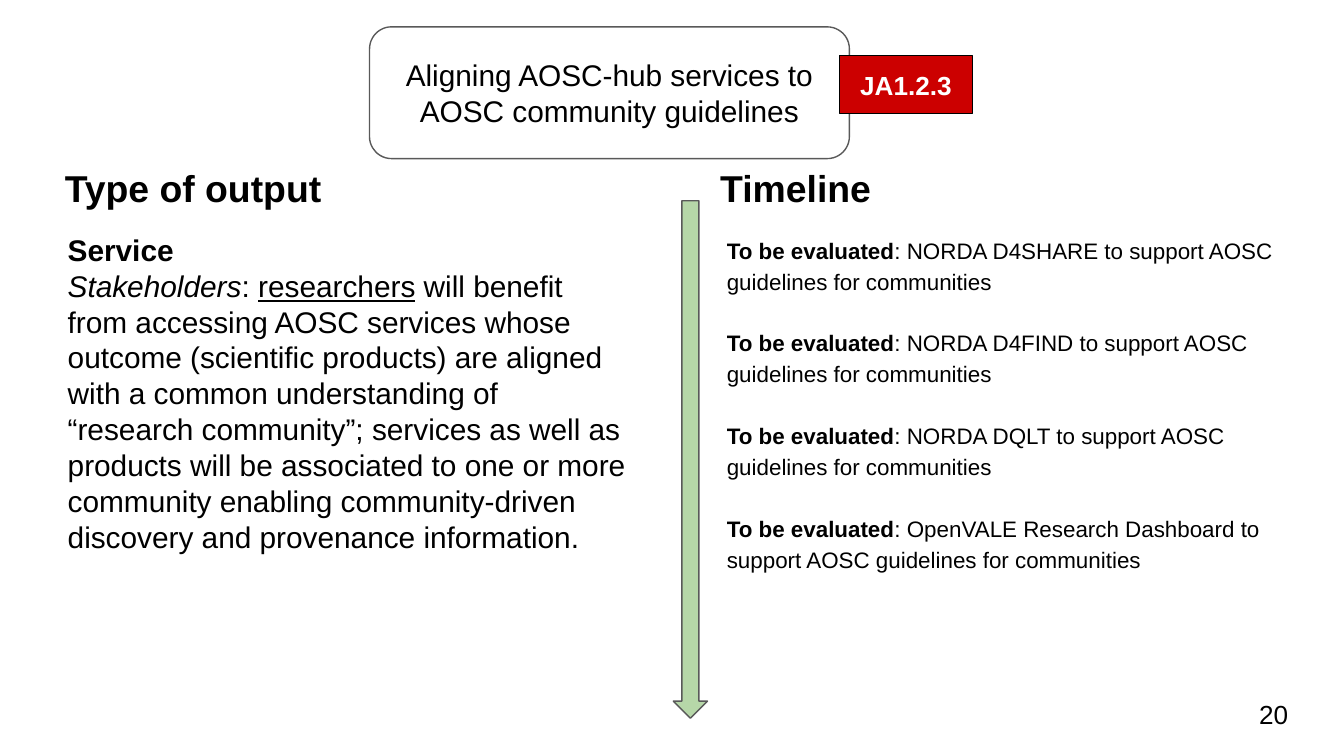
from pptx import Presentation
from pptx.dml.color import RGBColor
from pptx.enum.shapes import MSO_SHAPE
from pptx.enum.text import MSO_ANCHOR, PP_ALIGN
from pptx.util import Inches, Pt

ROUNDED, RECTANGLE, DOWN_ARROW = (
    MSO_SHAPE.ROUNDED_RECTANGLE, MSO_SHAPE.RECTANGLE, MSO_SHAPE.DOWN_ARROW)
TOP, MIDDLE = MSO_ANCHOR.TOP, MSO_ANCHOR.MIDDLE
LEFT, CENTER = PP_ALIGN.LEFT, PP_ALIGN.CENTER

COLORS = {"black": "000000", "white": "FFFFFF", "gray": "595959",
          "red": "CC0000", "green": "B6D7A8"}
FONT = "Arial"
COLUMNS, ROWS = 100, 56.25
CELL = Inches(0.1)

TITLE = "Aligning AOSC-hub services to AOSC community guidelines"
TAG = "JA1.2.3"
PAGE_NUMBER = "20"
OUTPUT_HEADING, TIMELINE_HEADING = "Type of output", "Timeline"
OUTPUT = [
    [("Service", "bold")],
    [("Stakeholders", "italic"), (": ", ""), ("researchers", "underline"),
     (" will benefit from accessing AOSC services whose outcome (scientific "
      "products) are aligned with a common understanding of “research "
      "community”; services as well as products will be associated to one or "
      "more community enabling community-driven discovery and provenance "
      "information.", "")],
]
SERVICES = ["NORDA D4SHARE", "NORDA D4FIND", "NORDA DQLT",
            "OpenVALE Research Dashboard"]
TIMELINE = [
    [("To be evaluated", "bold"),
     (f": {service} to support AOSC guidelines for communities", "")]
    for service in SERVICES
]


def color(name):
    return RGBColor.from_string(COLORS[name])


def place(cells):
    return [round(CELL * cell) for cell in cells]


def write(box, paragraphs, size, ink="black", bold=None, align=LEFT,
          anchor=TOP, line_spacing=None, gap=0):
    frame = box.text_frame
    frame.word_wrap = True
    frame.vertical_anchor = anchor
    frame.margin_left = frame.margin_right = CELL
    frame.margin_top = frame.margin_bottom = CELL
    for index, spans in enumerate(paragraphs):
        para = frame.add_paragraph() if index else frame.paragraphs[0]
        para.alignment = align
        para.line_spacing = line_spacing
        para.space_before = Pt(gap if index else 0)
        para.font.name, para.font.size = FONT, Pt(size)
        para.font.bold = bold
        para.font.color.rgb = color(ink)
        for text, style in spans:
            span = para.add_run()
            span.text = text
            if style:
                setattr(span.font, style, True)


def add_text(page, cells, paragraphs, size, **options):
    write(page.shapes.add_textbox(*place(cells)), paragraphs, size, **options)


def add_block(page, kind, cells, fill, line):
    block = page.shapes.add_shape(kind, *place(cells))
    block.shadow.inherit = False
    block.fill.solid()
    block.fill.fore_color.rgb = color(fill)
    block.line.color.rgb = color(line)
    block.line.width = Pt(0.75)
    return block


def main():
    deck = Presentation()
    deck.slide_width, deck.slide_height = place((COLUMNS, ROWS))
    page = deck.slides.add_slide(deck.slide_layouts[6])

    add_text(page, (92.7, 51, 6, 4.3), [[(PAGE_NUMBER, "")]], 14, anchor=MIDDLE)
    add_text(page, (4.06, 16.24, 43.7, 37.4), OUTPUT, 16)
    add_text(page, (53.1, 16.34, 43.7, 37.4), TIMELINE, 12,
             line_spacing=1.15, gap=16.5)

    title = add_block(page, ROUNDED, (27.5, 2, 35.7, 9.8), "white", "gray")
    write(title, [[(TITLE, "")]], 16, align=CENTER, anchor=MIDDLE)
    tag = add_block(page, RECTANGLE, (62.46, 4.14, 9.9, 4.3), "red", "black")
    write(tag, [[(TAG, "")]], 14, ink="white", bold=True, align=CENTER)
    add_block(page, DOWN_ARROW, (50.1, 14.94, 2.54, 38.5), "green", "gray")

    for left, heading in ((3.84, OUTPUT_HEADING), (52.6, TIMELINE_HEADING)):
        add_text(page, (left, 11.3, 28.3, 7.1), [[(heading, "")]], 20, bold=True)

    deck.save("out.pptx")


if __name__ == "__main__":
    main()
